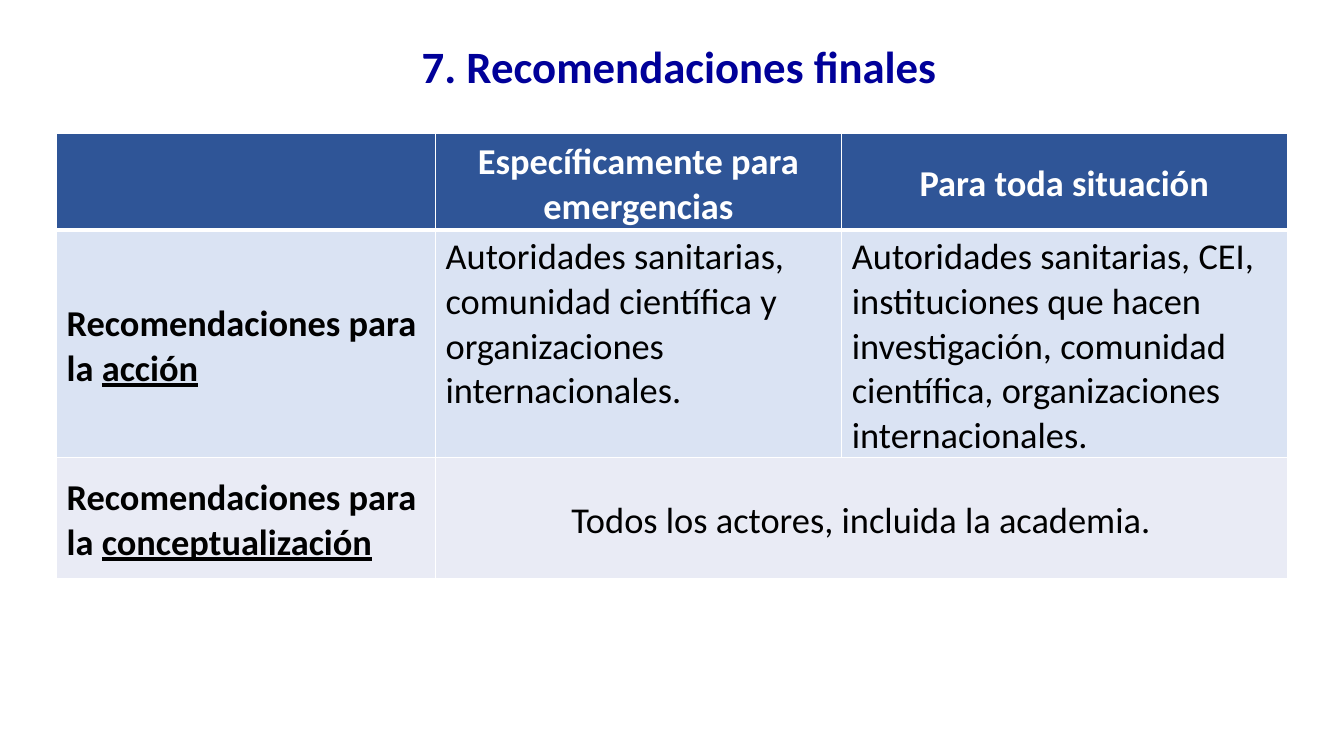
from pptx import Presentation
from pptx.dml.color import RGBColor
from pptx.enum.text import MSO_ANCHOR as Anchor, MSO_AUTO_SIZE as Fit, PP_ALIGN as Align
from pptx.oxml.ns import qn
from pptx.util import Pt
from lxml.etree import SubElement as Sub

NAVY = RGBColor(0x00, 0x00, 0x99)
BLUE = RGBColor(0x2F, 0x55, 0x97)
PALE = RGBColor(0xDA, 0xE3, 0xF3)
GREY = RGBColor(0xE9, 0xEB, 0xF5)
WHITE = RGBColor(0xFF, 0xFF, 0xFF)
BLACK = RGBColor(0x00, 0x00, 0x00)

WIDTHS = (270.7, 290.2, 318.2)
HEIGHTS = (69, 162.5, 86)
FILLS = (BLUE, PALE, GREY)

# Each cell is a list of runs; the second run is underlined
ROWS = (
    ([], ["Específicamente para emergencias"], ["Para toda situación"]),
    (["Recomendaciones para la ", "acción"],
     ["Autoridades sanitarias, comunidad científica y organizaciones internacionales."],
     ["Autoridades sanitarias, CEI, instituciones que hacen investigación, "
      "comunidad científica, organizaciones internacionales."]),
    (["Recomendaciones para la ", "conceptualización"],
     ["Todos los actores, incluida la academia."], []),
)


class Deck:
    face = "Calibri"

    def __init__(self):
        self.prs = Presentation()
        self.prs.slide_width, self.prs.slide_height = Pt(960), Pt(540)
        self.slide = self.prs.slides.add_slide(self.prs.slide_layouts[5])

    def label(self, para, parts, size, color, bold, align):
        para.alignment = align
        for i, text in enumerate(parts):
            run = para.add_run()
            run.text = text
            look = {"name": self.face, "size": Pt(size), "bold": bold, "underline": i == 1}
            for key, value in look.items():
                setattr(run.font, key, value)
            run.font.color.rgb = color

    def title(self, text, box):
        shape = self.slide.shapes.title
        for key, value in zip(("left", "top", "width", "height"), box):
            setattr(shape, key, Pt(value))
        frame = shape.text_frame
        frame.auto_size, frame.vertical_anchor = Fit.NONE, Anchor.MIDDLE
        self.label(frame.paragraphs[0], [text], 32, NAVY, True, Align.CENTER)

    def edges(self, cell, row):
        # Thick rule between the header and the body
        thick = {0: "lnB", 1: "lnT"}.get(row)
        props = cell._tc.get_or_add_tcPr()
        for side in ("lnL", "lnR", "lnT", "lnB"):
            width = Pt(3 if side == thick else 1)
            line = Sub(props, qn("a:" + side), w=str(width))
            Sub(Sub(line, qn("a:solidFill")), qn("a:srgbClr"), val=str(WHITE))

    def table(self, left, top):
        frame = self.slide.shapes.add_table(
            len(ROWS), len(WIDTHS), Pt(left), Pt(top), Pt(sum(WIDTHS)), Pt(sum(HEIGHTS)))
        grid = frame.table
        for col, width in zip(grid.columns, WIDTHS):
            col.width = Pt(width)
        for row, height in zip(grid.rows, HEIGHTS):
            row.height = Pt(height)
        for r, row in enumerate(ROWS):
            for c, parts in enumerate(row):
                cell = grid.cell(r, c)
                self.edges(cell, r)
                cell.fill.solid()
                cell.fill.fore_color.rgb = FILLS[r]
                cell.margin_bottom = 0
                cell.vertical_anchor = Anchor.TOP if r == 1 and c else Anchor.MIDDLE
                align = Align.LEFT if r == 1 or c == 0 else Align.CENTER
                self.label(cell.text_frame.paragraphs[0], parts, 26,
                           BLACK if r else WHITE, r == 0 or c == 0, align)
        grid.cell(2, 1).merge(grid.cell(2, 2))


def main():
    deck = Deck()
    # Heading
    deck.title("7. Recomendaciones finales", (44.6, 23, 881.3, 48))
    # Recommendations by scope
    deck.table(40.4, 95.4)
    deck.prs.save("out.pptx")


if __name__ == "__main__":
    main()
